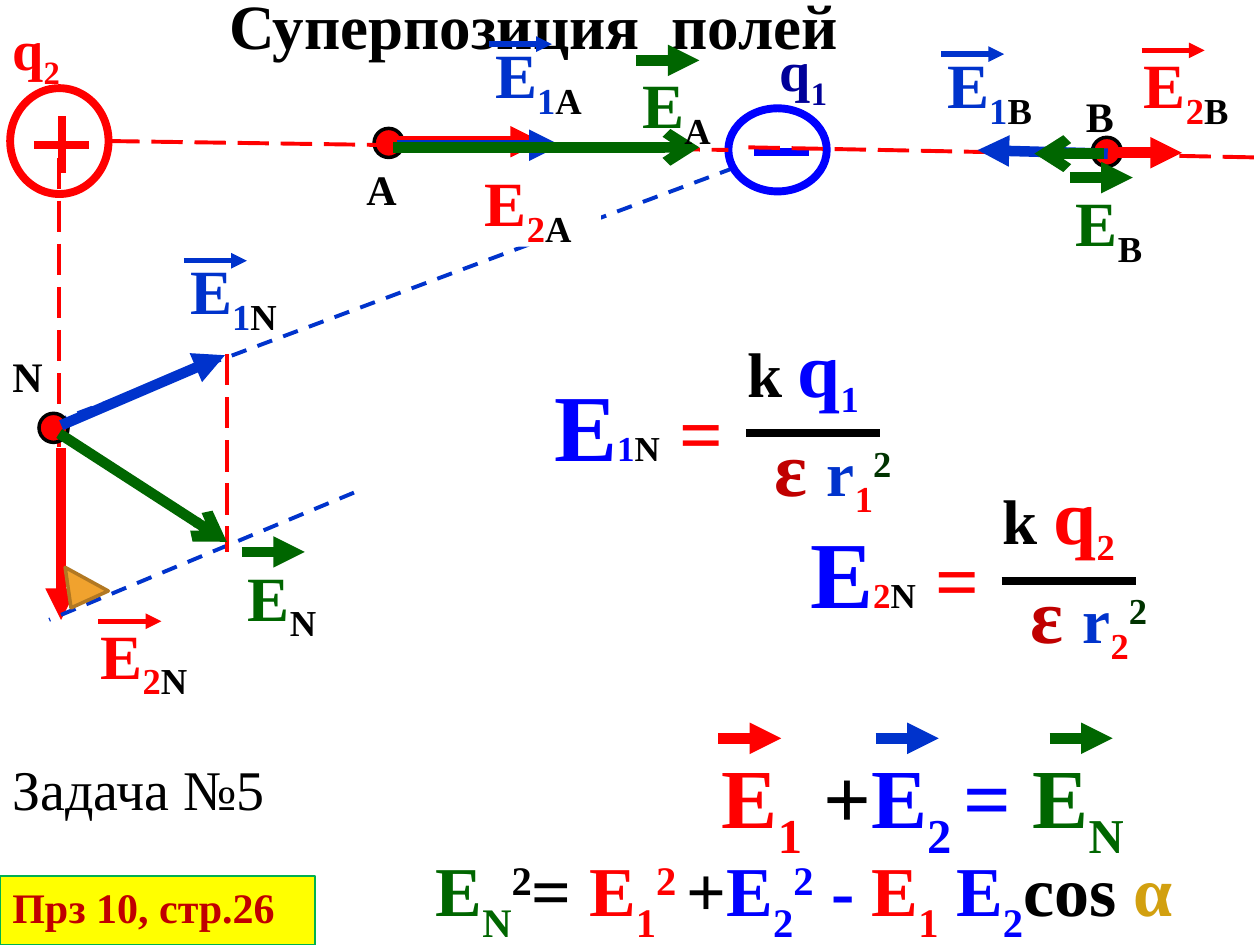
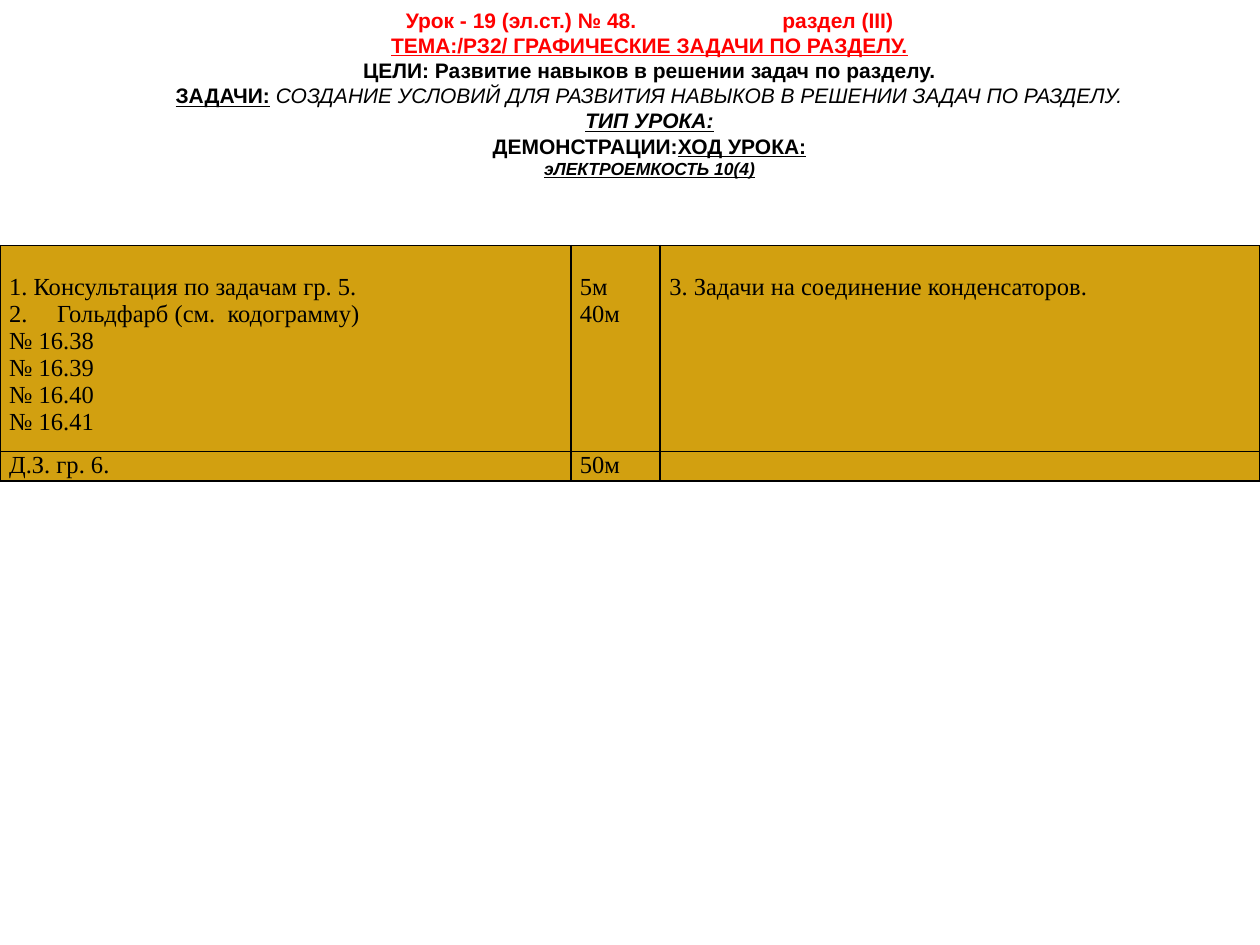
import pptx
import pptx.dml.color
import pptx.enum.dml
import pptx.enum.shapes
import pptx.enum.text
import pptx.oxml
import pptx.oxml.ns
import pptx.util

Pt = pptx.util.Pt
SHAPES = pptx.enum.shapes.MSO_SHAPE
DASHES = pptx.enum.dml.MSO_LINE
ANCHORS = pptx.enum.text.MSO_ANCHOR
RED, BLUE, PURE_BLUE, NAVY = "FF0000", "0033CC", "0000FF", "000099"
GREEN, DARK_GREEN, BLACK, WHITE = "006600", "003300", "000000", "FFFFFF"
CRIMSON, GOLD, YELLOW = "C00000", "D2A010", "FFFF00"
SERIF = {"name": "Times New Roman", "bold": True}
SUB, SUPER, LOW = -25, 30, -30


def rgb(value):
    """Turn a hex string into a colour."""
    return pptx.dml.color.RGBColor.from_string(value)


def add_xml(parent, markup):
    """Append one drawing element to a parent and return it."""
    name, gap, rest = markup.partition(" ")
    space = pptx.oxml.ns.nsdecls("a")
    child = pptx.oxml.parse_xml(f"<a:{name} {space}{gap}{rest}/>")
    parent.append(child)
    return child


def add_span(para, text, colour, base=0, **formats):
    """Add a run with its colour, baseline shift and font values."""
    span = para.add_run()
    span.text = text
    span.font.color.rgb = rgb(colour)
    for key, value in formats.items():
        setattr(span.font, key, value)
    if base:
        span.font._element.set("baseline", str(base * 1000))
    return span


def fill_line(frame, size, spans):
    """Write serif spans, each (text, colour, base, size), into a frame."""
    frame.vertical_anchor = ANCHORS.TOP
    para = frame.paragraphs[0]
    para.alignment = pptx.enum.text.PP_ALIGN.LEFT
    for text, colour, *rest in spans:
        base = rest[0] if rest else 0
        points = rest[1] if len(rest) > 1 else size
        add_span(para, text, colour, base, **SERIF, size=Pt(points))


def add_text(page, box, size, spans, wrap=True):
    """Place one line of serif text in a box."""
    frame = page.shapes.add_textbox(*map(Pt, box)).text_frame
    frame.word_wrap = wrap
    if not wrap:
        frame.auto_size = pptx.enum.text.MSO_AUTO_SIZE.SHAPE_TO_FIT_TEXT
    fill_line(frame, size, spans)
    return frame


def add_shape(page, kind, box, fill=None, line=None, width=2):
    """Place a flat preset shape."""
    shape = page.shapes.add_shape(kind, *map(Pt, box))
    shape.shadow.inherit = False
    for part, colour in ((shape.fill, fill), (shape.line.fill, line)):
        if colour:
            part.solid()
            part.fore_color.rgb = rgb(colour)
        else:
            part.background()
    if line:
        shape.line.width = Pt(width)
    return shape


def add_line(page, start, end, colour, width=2.25, dash=None, head=None):
    """Draw a straight line, dashed or with an arrowhead if asked."""
    kind = pptx.enum.shapes.MSO_CONNECTOR.STRAIGHT
    line = page.shapes.add_connector(kind, *map(Pt, (*start, *end)))
    line.line.color.rgb = rgb(colour)
    line.line.width = Pt(width)
    if dash:
        line.line.dash_style = dash
    if head:
        add_xml(line.line._get_or_add_ln(), f'tailEnd type="{head}"')
    add_xml(line._element.spPr, "effectLst")


def add_vector(page, start, end, colour, width=6, head="triangle"):
    """Draw a vector arrow."""
    add_line(page, start, end, colour, width, head=head)


def add_short_arrow(page, left, top, colour, width):
    """Draw the arrow that stands over a vector's letter."""
    add_vector(page, (left, top), (left + 36, top), colour, width)


def add_field_label(page, left, top, number, point):
    """Label the field of one charge at a point."""
    colour, right, down = {"1": (BLUE, 3.6, 8.6), "2": (RED, 5.8, 6.5)}[number]
    add_short_arrow(page, left + right, top + down, colour, 3)
    add_text(page, (left, top, 73.4, 51), 36,
             field_spans(number, point, colour))


def field_spans(number, point, colour):
    """Return the spans of a field letter with its two indices."""
    return [("Е", colour), (number, colour, SUB), (point, BLACK, SUB)]


def add_total_label(page, left, top, point, lift=0):
    """Label the resulting field at a point."""
    add_short_arrow(page, left + 3.6, top + lift, GREEN, 6)
    add_text(page, (left, top, 56.2, 51), 36,
             [("Е", GREEN), (point, BLACK, SUB)])


def add_charge(page, box, colour, signs):
    """Draw a charge as a ring with the strokes of its sign."""
    left, top, width, height = box
    add_shape(page, SHAPES.OVAL, box, line=colour, width=4.5)
    for x1, y1, x2, y2 in signs:
        add_line(page, (left + x1, top + y1), (left + x2, top + y2),
                 colour, 4.5)


def add_point(page, left, top, name, label_left, label_top):
    """Draw a field point and its name."""
    add_shape(page, SHAPES.OVAL, (left, top, 16.6, 16.6), RED, BLACK)
    add_text(page, (label_left, label_top, 38, 36), 24, [(name, BLACK)], False)


def add_charges(page):
    """Draw both charges with their names and the lines to N."""
    add_line(page, (419.8, 95.8), (36.7, 239), BLUE, dash=DASHES.DASH)
    add_line(page, (33.8, 90), (33.8, 281.5), RED, dash=DASHES.LONG_DASH)
    add_charge(page, (5.8, 50.4, 56.2, 60.5), RED,
               [(13.6, 32.4, 45.3, 32.4), (29.5, 48.2, 29.5, 15.8)])
    add_charge(page, (416.2, 61.9, 56.2, 47.5), PURE_BLUE,
               [(14.4, 25.2, 46.1, 25.2)])
    for left, top, number, colour in ((0, 5, "2", RED), (438.5, 16.6, "1", NAVY)):
        add_text(page, (left, top, 43.2, 46), 32,
                 [("q", colour), (number, colour, SUB)], False)


def add_point_n(page):
    """Draw the fields at point N and their sum."""
    add_point(page, 22.3, 236.2, "N", 0, 196.6)
    add_vector(page, (34.9, 256.3), (34.9, 354.3), RED)
    add_field_label(page, 50.4, 348.5, "2", "N")
    add_vector(page, (35, 243), (128.5, 203), BLUE)
    add_field_label(page, 101.5, 140.4, "1", "N")
    add_line(page, (202.3, 281.5), (28.1, 354.2), BLUE, dash=DASHES.DASH)
    add_line(page, (129.6, 202.3), (129.6, 315.4), RED, dash=DASHES.LONG_DASH)
    add_vector(page, (33.8, 247.7), (129.6, 309.6), GREEN, head="arrow")
    add_total_label(page, 134.6, 315.4, "N")
    angle = add_shape(page, SHAPES.ISOSCELES_TRIANGLE,
                      (31, 329.8, 28.1, 18.7), "F0A22E", "B27822")
    angle.rotation = 208.7


def add_point_a(page):
    """Draw the fields at point A, between the charges."""
    add_point(page, 213.8, 73.4, "А", 202.3, 90)
    add_line(page, (61.9, 80.6), (416.2, 85.7), RED, dash=DASHES.LONG_DASH)
    add_vector(page, (225.4, 81), (309.6, 81), RED)
    label = add_shape(page, SHAPES.RECTANGLE, (270, 90, 73.4, 51), WHITE)
    fill_line(label.text_frame, 36, field_spans("2", "А", RED))
    add_vector(page, (226.8, 83), (320.4, 83), BLUE)
    add_field_label(page, 275.8, 16.6, "1", "А")
    add_vector(page, (224.6, 84.2), (399.6, 84.2), GREEN, head="arrow")
    add_total_label(page, 360, 33.8, "А", 0.7)


def add_point_b(page):
    """Draw the fields at point B, beyond the second charge."""
    add_point(page, 624.2, 78.5, "В", 613.4, 48.2)
    add_line(page, (427.7, 84.2), (720, 90), RED, dash=DASHES.LONG_DASH)
    add_vector(page, (630, 87.3), (675.4, 87.3), RED)
    add_field_label(page, 646.6, 22.3, "2", "В")
    add_vector(page, (633, 87.8), (558.7, 85.8), BLUE)
    add_field_label(page, 534.2, 22.3, "1", "В")
    add_vector(page, (630.7, 87.8), (591.1, 87.8), GREEN, head="arrow")
    add_total_label(page, 607.7, 101.5, "В")


def add_fraction(page, left, top, number, colour, index_colour):
    """Write the formula for the field of one charge."""
    add_text(page, (left + 126, top + 72.7, 118, 53.3), 36,
             [("ε ", CRIMSON, 0, 44), ("r", BLUE), (number, RED, SUB),
              ("2", DARK_GREEN, SUPER)])
    add_text(page, (left, top + 42.5, 147, 78.5), 20,
             [("E", PURE_BLUE, 0, 54), (number, index_colour), ("N", BLACK),
              (" =", RED, 0, 44)])
    add_text(page, (left + 110.2, top, 120, 78.5), 36,
             [("k ", BLACK), ("q", colour, 0, 44), (number, colour, SUB),
              (" ", RED, SUB, 60)])
    add_line(page, (left + 116.6, top + 84.2), (left + 193.4, top + 84.2),
             BLACK, 4.5)


def add_sums(page):
    """Write the vector sum and the cosine rule."""
    add_text(page, (405.4, 421.9, 270, 65.5), 48,
             [("Е", RED), ("1", RED, LOW), (" +", BLACK), ("E", PURE_BLUE),
              ("2 ", PURE_BLUE, LOW), ("= ", PURE_BLUE), ("Е", GREEN),
              ("N", GREEN, LOW)])
    for left, colour in ((599.8, GREEN), (500.4, BLUE), (410.4, RED)):
        add_short_arrow(page, left, 421.9, colour, 6)
    rule = add_text(page, (241.9, 484.6, 478.1, 55.4), 40,
                    [("Е", GREEN), ("N", GREEN, LOW), ("2", BLACK, SUPER),
                     ("= ", BLACK), ("Е", RED), ("1", RED, LOW),
                     ("2 ", RED, SUPER), ("+", BLACK), ("E", PURE_BLUE),
                     ("2", PURE_BLUE, LOW), ("2", PURE_BLUE, SUPER),
                     (" - ", PURE_BLUE), ("Е", RED), ("1", RED, LOW),
                     (" E", PURE_BLUE), ("2", PURE_BLUE, LOW),
                     ("cos ", BLACK), ("α", GOLD)])
    rule.vertical_anchor = ANCHORS.MIDDLE


def add_task(page):
    """Write the task number and the exercise reference."""
    task = add_text(page, (0, 427.7, 191.5, 46), 32, [("Задача №5", BLACK)])
    task.paragraphs[0].runs[0].font.bold = False
    note = add_shape(page, SHAPES.RECTANGLE, (0, 500.4, 180, 39.6),
                     YELLOW, "00B050", 1.25)
    fill_line(note.text_frame, 24, [("Прз 10, стр.26", CRIMSON)])


def add_lesson_title(page, box):
    """Write the centred heading of the lesson plan."""
    bold, under = {"bold": True}, {"bold": True, "underline": True}
    slanted = {**under, "italic": True}
    lines = [
        [("Урок - 19 (эл.ст.) № 48.", RED, bold), (" ", RED, bold),
         ("раздел (III)", RED, bold)],
        [("ТЕМА:/РЗ2/ ГРАФИЧЕСКИЕ ЗАДАЧИ ПО РАЗДЕЛУ.", RED, under)],
        [("ЦЕЛИ: Развитие навыков в решении задач по разделу.", BLACK, bold)],
        [("ЗАДАЧИ:", BLACK, under),
         (" СОЗДАНИЕ УСЛОВИЙ ДЛЯ РАЗВИТИЯ НАВЫКОВ В РЕШЕНИИ ЗАДАЧ ПО РАЗДЕЛУ.",
          BLACK, {"italic": True})],
        [("ТИП УРОКА:", BLACK, slanted)],
        [("ДЕМОНСТРАЦИИ:", BLACK, bold), ("ХОД УРОКА:", BLACK, under)],
        [("эЛЕКТРОЕМКОСТЬ 10(4)", BLACK, {**slanted, "size": Pt(10)})],
    ]
    frame = page.shapes.add_textbox(*map(Pt, box)).text_frame
    frame.word_wrap = True
    frame.vertical_anchor = ANCHORS.MIDDLE
    for index, spans in enumerate(lines):
        para = frame.add_paragraph() if index else frame.paragraphs[0]
        para.alignment = pptx.enum.text.PP_ALIGN.CENTER
        for text, colour, formats in spans:
            values = {"name": "Arial", "size": Pt(12), **formats}
            span = add_span(para, text, colour, **values)
            if text == " ":
                span.font._element.set("spc", "8000")


def format_cell(cell, lines, top):
    """Fill one plan cell, with borders, and number its second step."""
    margins = {"margin_left": 5.2, "margin_right": 5.2,
               "margin_top": top, "margin_bottom": 0}
    for key, value in margins.items():
        setattr(cell, key, Pt(value))
    properties = cell._tc.get_or_add_tcPr()
    for side in ("lnL", "lnR", "lnT", "lnB"):
        border = add_xml(properties, f'{side} w="12700"')
        add_xml(add_xml(border, "solidFill"), f'srgbClr val="{BLACK}"')
    cell.fill.solid()
    cell.fill.fore_color.rgb = rgb(GOLD)
    for index, text in enumerate(lines):
        para = cell.text_frame.add_paragraph() if index else cell.text_frame.paragraphs[0]
        if text:
            add_span(para, text, BLACK, name=SERIF["name"], size=Pt(14))
        else:
            add_xml(para._p, 'endParaRPr sz="1400"')
        if text.startswith("Гольдфарб"):
            layout = para._p.get_or_add_pPr()
            layout.set("marL", str(Pt(27.4)))
            layout.set("indent", str(-Pt(27.4)))
            add_xml(layout, 'buAutoNum type="arabicPeriod" startAt="2"')


def add_plan(page, box):
    """Build the table of lesson steps and minutes."""
    steps = ["1. Консультация по задачам гр. 5.", "Гольдфарб (см.  кодограмму)",
             *(f"№ 16.{number}" for number in range(38, 42))]
    rows = [(117.6, 16, [steps, ["5м", "40м"],
                         ["3. Задачи на соединение конденсаторов."]]),
            (16.8, 0, [["Д.З. гр. 6."], ["50м"], [""]])]
    table = page.shapes.add_table(2, 3, *map(Pt, box)).table
    table.first_row = table.horz_banding = False
    for column, width in zip(table.columns, (326.2, 51.1, 342.7)):
        column.width = Pt(width)
    for row, (height, top, cells) in zip(table.rows, rows):
        row.height = Pt(height)
        for cell, lines in zip(row.cells, cells):
            format_cell(cell, lines, top)


def build_fields(page):
    """Build the slide on superposition of fields."""
    add_charges(page)
    add_point_n(page)
    add_text(page, (123.8, -11.5, 365.8, 51), 36,
             [("Суперпозиция  полей", BLACK)], False)
    add_sums(page)
    add_point_a(page)
    add_point_b(page)
    add_task(page)
    add_fraction(page, 309.6, 163.4, "1", PURE_BLUE, PURE_BLUE)
    add_fraction(page, 455.8, 247.7, "2", RED, RED)


def build_lesson(page):
    """Build the lesson plan slide."""
    add_lesson_title(page, (22.3, 0, 697.7, 106.6))
    add_plan(page, (0, 140.4, 720, 134.4))


def main():
    """Build and save the deck."""
    deck = pptx.Presentation()
    deck.slide_width, deck.slide_height = Pt(720), Pt(540)
    for build in (build_fields, build_lesson):
        build(deck.slides.add_slide(deck.slide_layouts[6]))
    deck.save("out.pptx")


if __name__ == "__main__":
    main()
